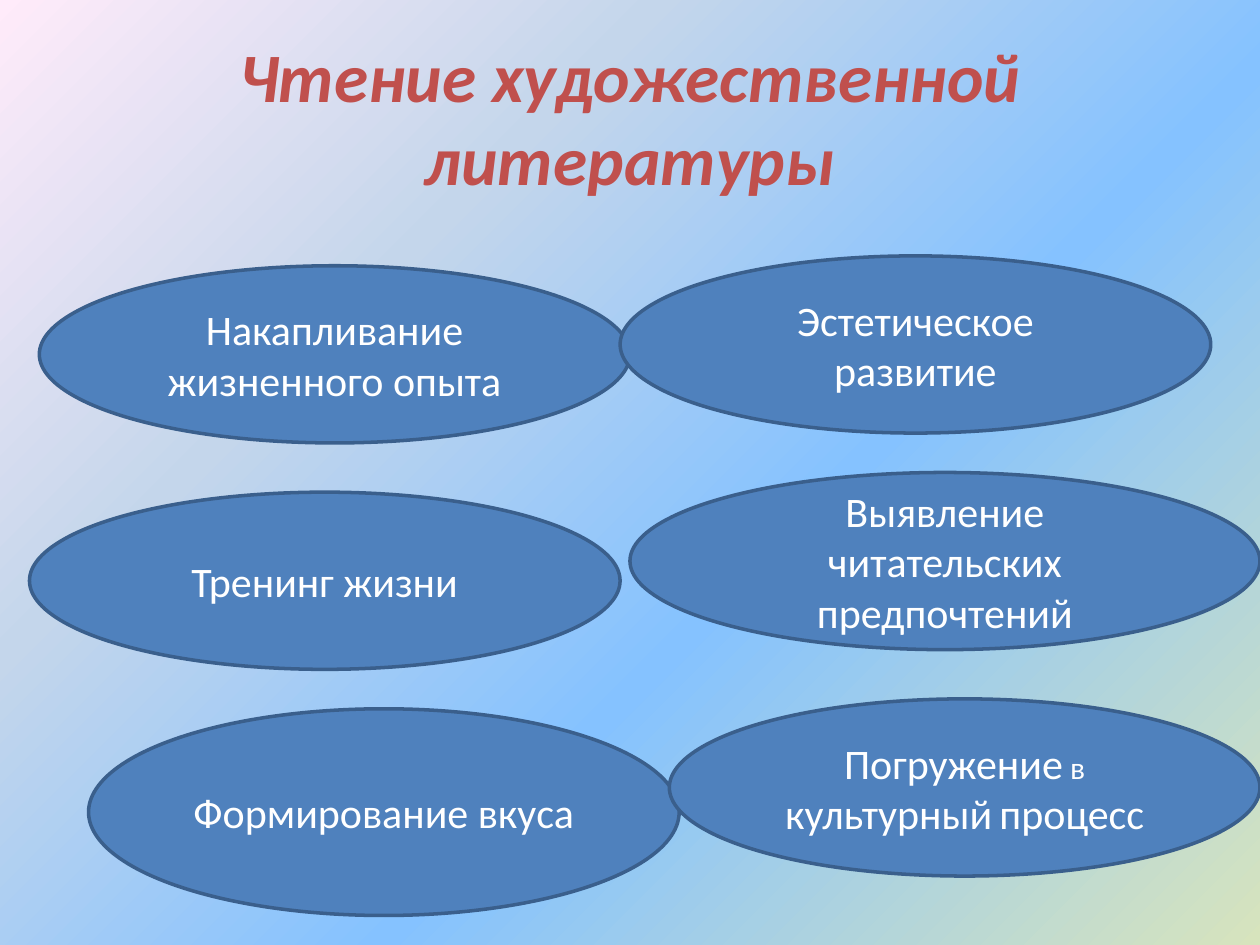
from pptx import Presentation
from pptx.dml.color import RGBColor
from pptx.enum.shapes import MSO_SHAPE as Shape
from pptx.enum.text import MSO_ANCHOR as Anchor, PP_ALIGN as Align
from pptx.oxml import parse_xml
from pptx.oxml.ns import nsdecls, qn
from pptx.util import Pt

TITLE = "Чтение художественной литературы"
BIG, SMALL = 24, 18
WIDTH, HEIGHT = 337.5, 101.25
OVALS = [
    (22.5, 151.88, WIDTH, HEIGHT, [("Накапливание жизненного опыта", BIG)]),
    (360, 270, 360, HEIGHT, [("Выявление", BIG), (" ", SMALL), ("читательских", BIG),
                             (" ", SMALL), ("предпочтений", BIG)]),
    (16.88, 281.25, WIDTH, HEIGHT, [("Тренинг жизни", BIG)]),
    (50.62, 405, WIDTH, 118.12, [("Формирование вкуса", BIG)]),
    (382.5, 399.38, WIDTH, HEIGHT, [("Погружение", BIG), (" в ", SMALL), ("культурный", BIG),
                                    (" ", SMALL), ("процесс", BIG)]),
    (354.38, 146.25, WIDTH, HEIGHT, [("Эстетическое развитие", BIG)]),
]
COLORS = {"title": "C0504D", "oval": "4F81BD", "outline": "3A5F8C", "text": "FFFFFF"}
GRADIENT = {0: "D7E4BD", 40: "85C2FF", 70: "C4D6EB", 100: "FFEBFA"}


def rgb(name):
    """Return the named colour."""
    return RGBColor.from_string(COLORS[name])


def write(sp, runs, color, **style):
    """Fill a shape with one centred paragraph of sized runs."""
    tf = sp.text_frame
    tf.word_wrap = True
    tf.vertical_anchor = Anchor.MIDDLE
    p = tf.paragraphs[0]
    p.alignment = Align.CENTER
    for text, size in runs:
        r = p.add_run()
        r.text = text
        r.font.color.rgb = rgb(color)
        for key, value in {"name": "Calibri", "size": Pt(size), **style}.items():
            setattr(r.font, key, value)


def paint_background(s):
    """Give the slide a gradient spreading from its lower right corner."""
    s.background.fill.gradient()
    old = next(s.element.iter(qn("a:gradFill")))
    stops = "".join(f'<a:gs pos="{pos * 1000}"><a:srgbClr val="{color}"/></a:gs>'
                    for pos, color in GRADIENT.items())
    old.getparent().replace(old, parse_xml(
        f'<a:gradFill {nsdecls("a")} rotWithShape="1"><a:gsLst>{stops}</a:gsLst>'
        '<a:path path="circle"><a:fillToRect l="100000" t="100000"/></a:path></a:gradFill>'))


def add_oval(s, left, top, width, height, runs):
    """Add one labelled oval."""
    sp = s.shapes.add_shape(Shape.OVAL, Pt(left), Pt(top), Pt(width), Pt(height))
    sp.shadow.inherit = False
    sp.fill.solid()
    sp.fill.fore_color.rgb = rgb("oval")
    sp.line.color.rgb = rgb("outline")
    sp.line.width = Pt(2)
    write(sp, runs, "text")


def main():
    """Build and save the slide."""
    prs = Presentation()
    prs.slide_width, prs.slide_height = Pt(720), Pt(540)
    s = prs.slides.add_slide(prs.slide_layouts[5])
    paint_background(s)
    title = s.shapes.title
    title.left, title.top, title.width, title.height = Pt(36), Pt(21.6), Pt(648), Pt(90)
    write(title, [(TITLE, 39.6)], "title", bold=True, italic=True)
    for oval in OVALS:
        add_oval(s, *oval)
    prs.save("out.pptx")


if __name__ == "__main__":
    main()
